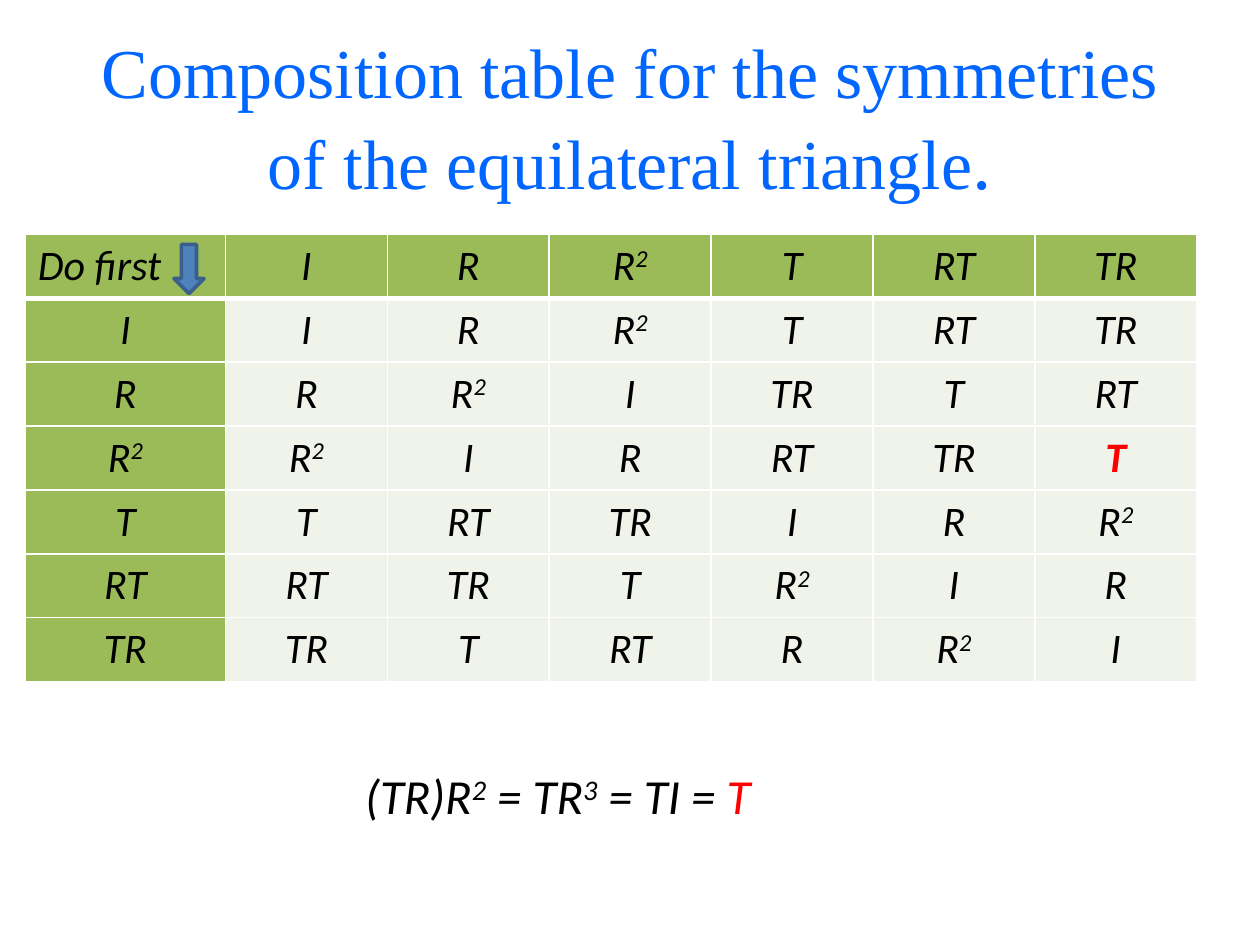
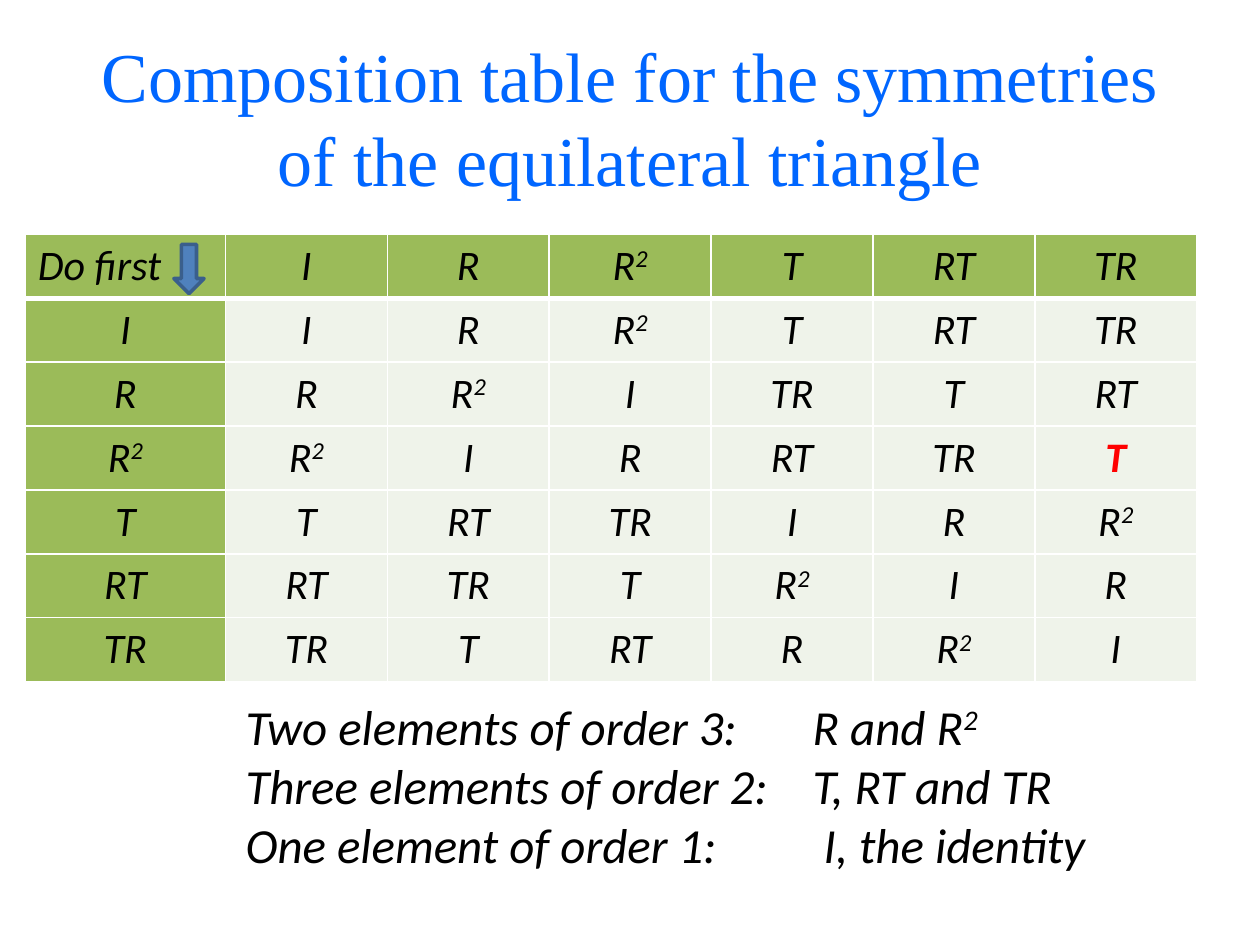
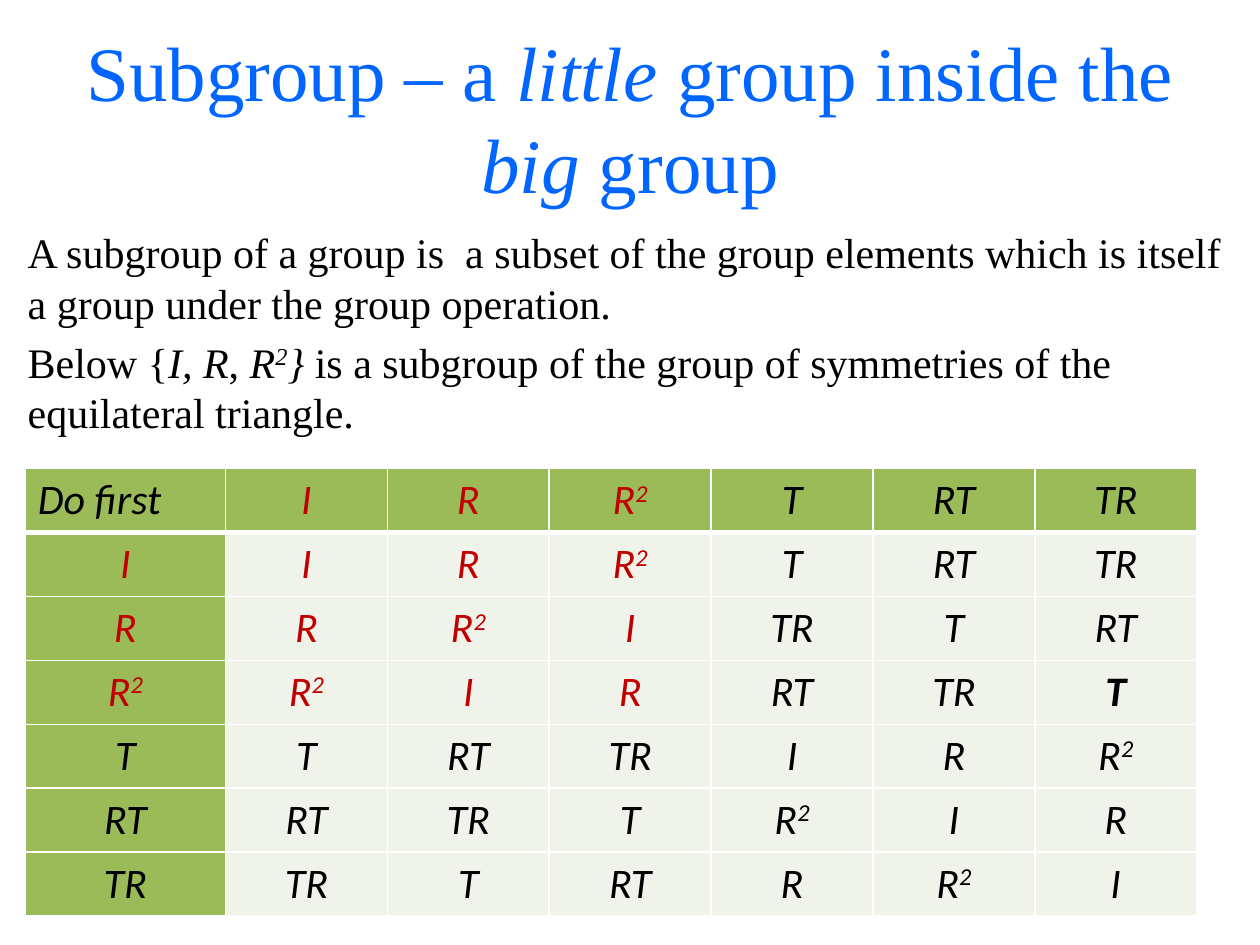
from lxml.etree import SubElement
from pptx import Presentation
from pptx.dml.color import RGBColor
from pptx.enum.shapes import MSO_SHAPE
from pptx.enum.text import MSO_ANCHOR, PP_ALIGN
from pptx.oxml.ns import qn
from pptx.util import Inches, Pt

TITLE_BLUE = RGBColor(0x00, 0x66, 0xFF)
HEADER_GREEN = RGBColor(0x9B, 0xBB, 0x59)
CELL_GREEN = RGBColor(0xEF, 0xF3, 0xEA)
ARROW_BLUE = RGBColor(0x4F, 0x81, 0xBD)
ARROW_EDGE = RGBColor(0x3A, 0x5F, 0x8C)
RESULT_RED = RGBColor(0xFF, 0x00, 0x00)
SUBGROUP_RED = RGBColor(0xC0, 0x00, 0x00)
BLACK = RGBColor(0x00, 0x00, 0x00)
WHITE = RGBColor(0xFF, 0xFF, 0xFF)
SERIF, SANS = "Times New Roman", "Calibri"

TITLE_AND_BODY, TITLE_ONLY = 1, 5
TRIANGLE_TITLE = "Composition table for the symmetries of the equilateral triangle"
ELEMENTS = ["I", "R", "R2", "T", "RT", "TR"]
PRODUCTS = [
    ["I", "R", "R2", "T", "RT", "TR"],
    ["R", "R2", "I", "TR", "T", "RT"],
    ["R2", "I", "R", "RT", "TR", "T"],
    ["T", "RT", "TR", "I", "R", "R2"],
    ["RT", "TR", "T", "R2", "I", "R"],
    ["TR", "T", "RT", "R", "R2", "I"],
]
GRID = [["Do first"] + ELEMENTS] + [
    [element] + row for element, row in zip(ELEMENTS, PRODUCTS)
]
RESULT_CELL = (3, 6)
SUBGROUP_ORDER = 3


def set_font(font, face, size, color, italic=None):
    """Apply face, size, colour and slant to a font."""
    font.name = face
    font.size = Pt(size)
    font.color.rgb = color
    font.italic = italic


def add_run(paragraph, text, italic=None, color=None, size=None):
    """Append a run that overrides only what is given."""
    run = paragraph.add_run()
    run.text = text
    if italic is not None:
        run.font.italic = italic
    if color is not None:
        run.font.color.rgb = color
    if size is not None:
        run.font.size = Pt(size)
    return run


def add_power(paragraph, base, exponent, italic=None):
    """Append a base followed by a raised exponent."""
    add_run(paragraph, base, italic)
    raised = add_run(paragraph, exponent, italic)
    raised.font._element.set("baseline", "30000")


def add_title(slide, size):
    """Format the title placeholder and return its paragraph."""
    title = slide.shapes.title
    title.left, title.top = Inches(0.5), Inches(0.3)
    title.width, title.height = Inches(9), Inches(1.25)
    title.text_frame.vertical_anchor = MSO_ANCHOR.MIDDLE
    paragraph = title.text_frame.paragraphs[0]
    paragraph.alignment = PP_ALIGN.CENTER
    set_font(paragraph.font, SERIF, size, TITLE_BLUE)
    return paragraph


def set_borders(cell, bottom):
    """Draw white cell edges, with a bottom edge of its own width."""
    properties = cell._tc.get_or_add_tcPr()
    for side, width in (("L", 1), ("R", 1), ("T", 1), ("B", bottom)):
        edge = SubElement(properties, qn(f"a:ln{side}"), w=str(Pt(width)))
        fill = SubElement(edge, qn("a:solidFill"))
        SubElement(fill, qn("a:srgbClr"), val=str(WHITE))


def fill_cell(cell, row, column, color):
    """Write and style one cell of the composition table."""
    is_header = row == 0 or column == 0
    set_borders(cell, 3 if row == 0 else 1)
    cell.fill.solid()
    cell.fill.fore_color.rgb = HEADER_GREEN if is_header else CELL_GREEN
    paragraph = cell.text_frame.paragraphs[0]
    set_font(paragraph.font, SANS, 24, color, italic=True)
    if (row, column) != (0, 0):
        paragraph.alignment = PP_ALIGN.CENTER
    if (row, column) == RESULT_CELL:
        paragraph.font.bold = True
    symbol = GRID[row][column]
    if symbol == "R2":
        add_power(paragraph, "R", "2")
    else:
        add_run(paragraph, symbol)


def add_composition_table(slide, left, top, result_color=BLACK, subgroup_color=BLACK):
    """Place the table of products, colouring the subgroup and the result."""
    size = len(GRID)
    table = slide.shapes.add_table(
        size, size, left, top, Inches(9.3), Inches(3.5)
    ).table
    table.first_row = table.horz_banding = False
    for index, column in enumerate(table.columns):
        column.width = Inches(1.285 if index else 1.59)
    for row in range(size):
        for column in range(size):
            color = BLACK
            if (row, column) == RESULT_CELL:
                color = result_color
            elif row + column > 0 and max(row, column) <= SUBGROUP_ORDER:
                color = subgroup_color
            fill_cell(table.cell(row, column), row, column, color)


def add_marked_table(slide, left, top):
    """Place the table with its red result and the arrow beside Do first."""
    add_composition_table(slide, left, top, result_color=RESULT_RED)
    arrow = slide.shapes.add_shape(
        MSO_SHAPE.DOWN_ARROW,
        left + Inches(1.18), top + Inches(0.08), Inches(0.24), Inches(0.39),
    )
    arrow.shadow.inherit = False
    arrow.fill.solid()
    arrow.fill.fore_color.rgb = ARROW_BLUE
    arrow.line.color.rgb = ARROW_EDGE
    arrow.line.width = Pt(2)


def add_note(slide, left, top, width, height, wrap, line_count=1):
    """Add an italic note and return its paragraphs."""
    frame = slide.shapes.add_textbox(left, top, width, height).text_frame
    frame.word_wrap = wrap
    for _ in range(line_count - 1):
        frame.add_paragraph()
    for paragraph in frame.paragraphs:
        set_font(paragraph.font, SANS, 28, BLACK, italic=True)
    return frame.paragraphs


def build_product_slide(deck):
    """Show the table with one product worked out."""
    slide = deck.slides.add_slide(deck.slide_layouts[TITLE_ONLY])
    title = add_title(slide, 40)
    add_run(title, TRIANGLE_TITLE)
    add_run(title, ".", size=44)
    add_marked_table(slide, Inches(0.2), Inches(1.86))
    (formula,) = add_note(
        slide, Inches(2.8), Inches(6.03), Inches(3.43), Inches(0.57), wrap=False
    )
    add_power(formula, "(TR)R", "2")
    add_power(formula, " = TR", "3")
    add_run(formula, " = TI =")
    add_run(formula, " T", color=RESULT_RED)


def build_orders_slide(deck):
    """Show the table with the orders of its elements."""
    slide = deck.slides.add_slide(deck.slide_layouts[TITLE_ONLY])
    add_run(add_title(slide, 40), TRIANGLE_TITLE)
    add_marked_table(slide, Inches(0.2), Inches(1.86))
    order_three, order_two, order_one = add_note(
        slide, Inches(1.85), Inches(5.48), Inches(7.95), Inches(1.51),
        wrap=True, line_count=3,
    )
    add_power(order_three, "Two elements of order 3: \t\tR and R", "2")
    add_run(order_two, "Three elements of order 2: \tT, RT and TR")
    add_run(order_one, "One element of order 1:\t\t I, the identity")


def add_definition(slide, left, top, width, height):
    """Define a subgroup and name the example in the body placeholder."""
    body = slide.placeholders[1]
    body.left, body.top, body.width, body.height = left, top, width, height
    definition = body.text_frame.paragraphs[0]
    example = body.text_frame.add_paragraph()
    for paragraph in (definition, example):
        set_font(paragraph.font, SERIF, 24, BLACK)
        properties = paragraph._p.get_or_add_pPr()
        properties.set("marL", "0")
        properties.set("indent", "0")
        properties.insert(0, properties.makeelement(qn("a:buNone")))
    add_run(
        definition,
        "A subgroup of a group is  a subset of the group elements "
        "which is itself a group under the group operation.",
    )
    add_run(example, "Below {")
    add_run(example, "I, R", italic=True)
    add_run(example, ", ")
    add_power(example, "R", "2", italic=True)
    add_run(example, "} ", italic=True)
    add_run(
        example,
        "is a subgroup of the group of symmetries of the equilateral triangle.",
    )


def build_subgroup_slide(deck):
    """Define a subgroup and mark one in the table."""
    slide = deck.slides.add_slide(deck.slide_layouts[TITLE_AND_BODY])
    title = add_title(slide, 44)
    add_run(title, "Subgroup – a ")
    add_run(title, "little", italic=True)
    add_run(title, " group inside the ")
    add_run(title, "big", italic=True)
    add_run(title, " group")
    add_definition(slide, Inches(0.12), Inches(1.75), Inches(9.69), Inches(5.62))
    add_composition_table(
        slide, Inches(0.2), Inches(3.72), subgroup_color=SUBGROUP_RED
    )


def main():
    """Build the three slides and save them."""
    deck = Presentation()
    deck.slide_width, deck.slide_height = Inches(10), Inches(7.5)
    build_product_slide(deck)
    build_orders_slide(deck)
    build_subgroup_slide(deck)
    deck.save("out.pptx")


if __name__ == "__main__":
    main()
